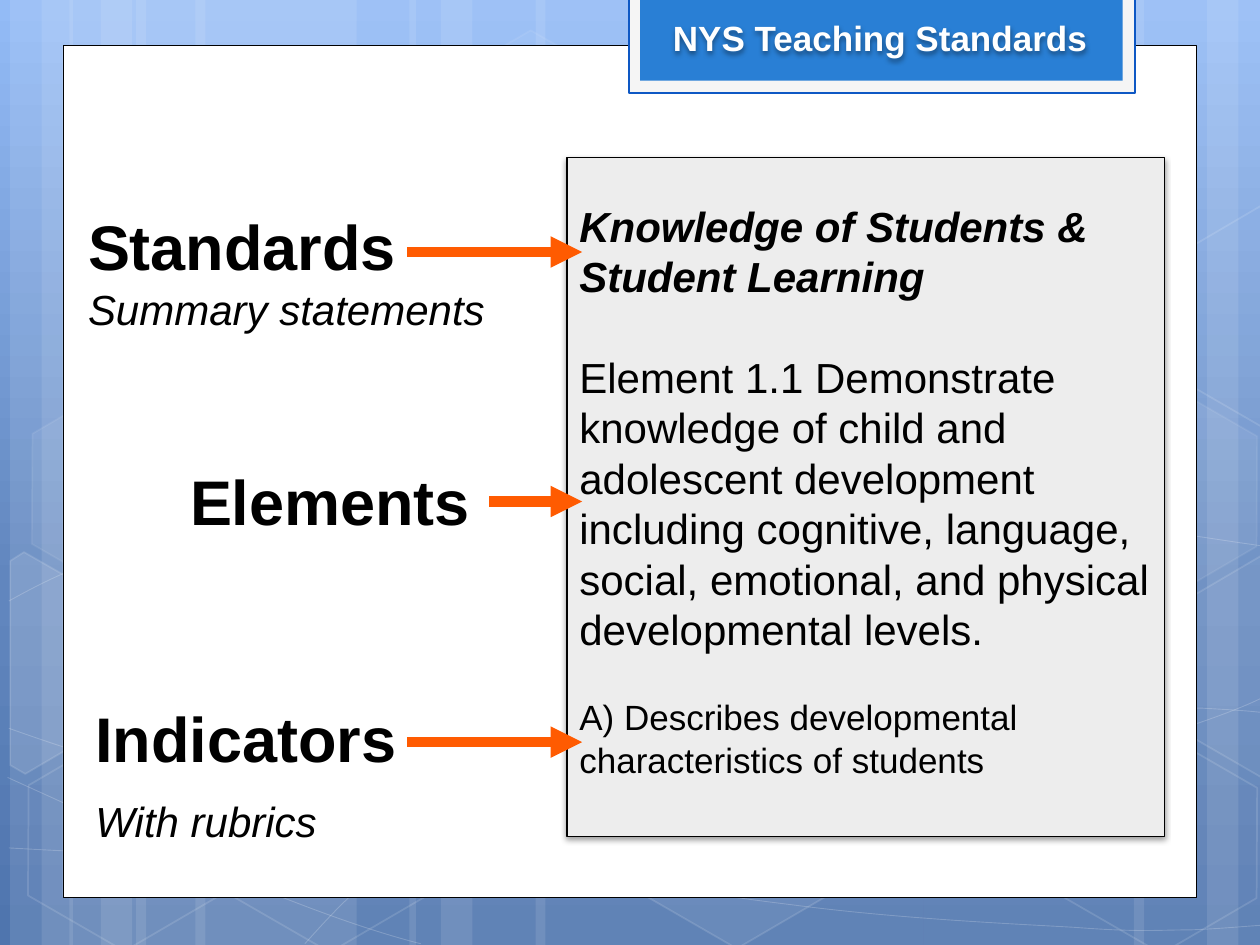
from copy import deepcopy
from dataclasses import dataclass
from math import cos, radians, sin
from typing import Optional

from lxml import etree
from pptx import Presentation
from pptx.dml.color import RGBColor
from pptx.enum.shapes import MSO_CONNECTOR, MSO_SHAPE
from pptx.enum.text import MSO_ANCHOR, MSO_AUTO_SIZE, PP_ALIGN
from pptx.oxml.ns import qn
from pptx.util import Emu, Inches, Pt

RECTANGLE, HEXAGON = MSO_SHAPE.RECTANGLE, MSO_SHAPE.HEXAGON
STRAIGHT = MSO_CONNECTOR.STRAIGHT
TOP = MSO_ANCHOR.TOP
NO_AUTOFIT = MSO_AUTO_SIZE.NONE
LEFT, CENTER = PP_ALIGN.LEFT, PP_ALIGN.CENTER
CELL = Inches(1)
COLUMNS, ROWS = 10, 7.5
FONT = "Arial"
WHITE, BLACK, ORANGE = "FFFFFF", "000000", "FF5B01"
TILT = 30


@dataclass
class Box:
    left: float
    top: float
    width: float
    height: float

    def emu(self) -> list[Emu]:
        return [grid(n) for n in (self.left, self.top, self.width, self.height)]


@dataclass
class Style:
    fill: Optional[str] = None
    fill_alpha: int = 100
    line: Optional[str] = None
    line_width: float = 1
    line_alpha: int = 100


@dataclass
class Hexagon:
    left: float
    top: float
    fill_alpha: int
    line_alpha: int


@dataclass
class CutHexagon:
    center: tuple[float, float]
    corners: list[tuple[float, float]]
    fill_alpha: int


@dataclass
class Label:
    box: Box
    heading: str
    note: str = ""
    note_gap: float = 0


@dataclass
class Arrow:
    start: float
    row: float


BARS = [(1.08, 1.75), (0.08, 0.5), (0.33, 0.83), (1.55, 1.75), (0.55, 0.5), (0.8, 0.83),
        (7.33, 1.75), (9.58, 0.5), (9, 0.83), (4.25, 3.08), (3.25, 0.5), (3.5, 0.83)]
CURVES = [
    [(0.07, 6.73), (0.61, 6.76), (1.15, 6.79), (1.9, 6.78), (2.65, 6.77), (3.58, 6.75),
     (4.58, 6.65), (5.58, 6.55), (7, 6.36), (7.92, 6.17), (8.83, 5.98), (9.77, 5.68), (10.07, 5.51)],
    [(0.07, 4.77), (0.36, 4.61), (0.65, 4.46), (1.21, 4.31), (1.78, 4.16), (2.59, 3.94),
     (3.47, 3.87), (4.36, 3.8), (5.44, 3.79), (6.54, 3.87), (7.64, 3.95), (9.47, 4.26), (10.07, 4.34)],
    [(0.06, 6.17), (1.27, 6.72), (2.47, 7.27), (3.34, 7.49)],
    [(0.07, 5.78), (0.38, 5.89), (0.7, 6), (1.28, 6.16), (1.86, 6.31), (2.73, 6.56), (3.57, 6.73),
     (4.4, 6.9), (5.45, 7.08), (6.28, 7.18), (7.11, 7.29), (8, 7.33), (8.53, 7.36),
     (9.05, 7.4), (9.19, 7.38), (9.45, 7.38), (9.71, 7.37), (9.89, 7.35), (10.07, 7.34)],
    [(2.42, 7.49), (2.6, 7.29), (2.78, 7.09), (3.02, 6.91), (3.26, 6.73), (3.6, 6.53), (3.88, 6.39),
     (4.16, 6.25), (4.33, 6.19), (4.7, 6.09), (5.06, 5.99), (5.73, 5.85), (6.08, 5.78),
     (6.44, 5.71), (6.49, 5.71), (6.8, 5.69), (7.11, 5.66), (7.6, 5.63), (7.94, 5.62),
     (8.29, 5.61), (8.86, 5.62), (8.86, 5.62), (8.86, 5.62), (9.53, 5.62), (9.53, 5.62),
     (9.71, 5.63), (9.88, 5.64), (9.97, 5.65), (10.06, 5.66), (10.03, 5.65), (10.06, 5.66)],
]
HEXAGONS = [Hexagon(3.34, 0.36, 4, 8), Hexagon(4.97, 5.89, 6, 12), Hexagon(0.11, 5.91, 0, 12),
            Hexagon(0.14, 3.12, 7, 8), Hexagon(1.74, 5.92, 0, 12), Hexagon(7.53, 4.53, 10, 12),
            Hexagon(8.34, 5.93, 0, 12), Hexagon(8.34, 3.14, 7, 8)]
CUT_HEXAGONS = [
    CutHexagon((0.36, 5.35), [(0.08, 4.45), (0.19, 4.38), (0.96, 4.82), (0.95, 5.7),
                              (0.2, 6.14), (0.08, 6.07)], 10),
    CutHexagon((9.85, 5.2), [(9.26, 4.85), (10.01, 4.41), (10.09, 4.46), (10.09, 6.13),
                             (10.02, 6.17), (9.26, 5.73)], 4),
    CutHexagon((9.85, 2.41), [(9.26, 2.07), (10.01, 1.63), (10.1, 1.68), (10.09, 3.35),
                              (10.02, 3.39), (9.26, 2.95)], 0),
]
LABELS = [Label(Box(0.66, 5.5, 3.2, 1.31), "Indicators", "With rubrics", 12),
          Label(Box(0.6, 1.6, 3.38, 1.11), "Standards", "Summary statements"),
          Label(Box(1.41, 3.62, 2.45, 0.71), "Elements")]
ARROWS = [Arrow(3.23, 2), Arrow(3.88, 3.98), Arrow(3.23, 5.89)]
ARROW_TIP = 4.62


def grid(cells: float) -> Emu:
    return Emu(round(cells * CELL))


def color(code: str) -> RGBColor:
    return RGBColor.from_string(code)


def set_alpha(solid_fill, percent: int) -> None:
    if percent < 100:
        etree.SubElement(solid_fill[0], qn("a:alpha"), val=str(percent * 1000))


def apply_style(shape, style: Style) -> None:
    shape.shadow.inherit = False
    properties = shape._element.spPr
    if style.fill and style.fill_alpha:
        shape.fill.solid()
        shape.fill.fore_color.rgb = color(style.fill)
        set_alpha(properties.find(qn("a:solidFill")), style.fill_alpha)
    else:
        shape.fill.background()
    if style.line:
        shape.line.color.rgb = color(style.line)
        shape.line.width = Pt(style.line_width)
        set_alpha(properties.find(qn("a:ln")).find(qn("a:solidFill")), style.line_alpha)
    else:
        shape.line.fill.background()


def add_shadow(shape) -> None:
    shape.shadow.inherit = False
    effects = shape._element.spPr.find(qn("a:effectLst"))
    shadow = etree.SubElement(effects, qn("a:outerShdw"), blurRad=str(Pt(3.1)), dist=str(Pt(1.6)),
                              dir="5400000", rotWithShape="0")
    set_alpha([etree.SubElement(shadow, qn("a:srgbClr"), val=BLACK)], 38)


def add_box(shapes, box: Box, style: Style, kind=RECTANGLE):
    shape = shapes.add_shape(kind, *box.emu())
    apply_style(shape, style)
    return shape


def add_outline(shapes, points, style: Style, close: bool):
    corners = [(grid(x), grid(y)) for x, y in points]
    builder = shapes.build_freeform(*corners[0])
    builder.add_line_segments(corners[1:], close=close)
    outline = builder.convert_to_shape()
    apply_style(outline, style)
    return outline


def add_curve(shapes, knots, style: Style) -> None:
    outline = add_outline(shapes, knots, style, False)
    segments = list(outline._element.iter(qn("a:lnTo")))
    for first in range(0, len(segments), 3):
        bezier = etree.Element(qn("a:cubicBezTo"))
        segments[first].addprevious(bezier)
        for segment in segments[first:first + 3]:
            bezier.append(segment[0])
            segment.getparent().remove(segment)


def turn_back(point, center) -> tuple[float, float]:
    angle = radians(-TILT)
    dx, dy = point[0] - center[0], point[1] - center[1]
    return (center[0] + dx * cos(angle) - dy * sin(angle),
            center[1] + dx * sin(angle) + dy * cos(angle))


def write(frame, text: str, *, size: float, ink: str = BLACK, bold: bool = False,
          italic: bool = False, align=LEFT, before: float = 0) -> None:
    paragraph = frame.paragraphs[0] if not frame.text else frame.add_paragraph()
    paragraph.alignment = align
    paragraph.space_before = Pt(before)
    paragraph.line_spacing = Pt(1.2 * size)
    run = paragraph.add_run()
    run.text = text
    font = run.font
    font.name, font.size, font.bold, font.italic = FONT, Pt(size), bold, italic
    font.color.rgb = color(ink)


def prepare_frame(shape, wrap: bool = True):
    frame = shape.text_frame
    frame.word_wrap = wrap
    frame.auto_size = NO_AUTOFIT
    frame.vertical_anchor = TOP
    return frame


def add_label(shapes, label: Label) -> None:
    frame = prepare_frame(shapes.add_textbox(*label.box.emu()), wrap=False)
    write(frame, label.heading, size=36, bold=True)
    if label.note:
        write(frame, label.note, size=24, italic=True, before=label.note_gap)


def add_arrow(shapes, arrow: Arrow) -> None:
    connector = shapes.add_connector(STRAIGHT, grid(ARROW_TIP), grid(arrow.row),
                                     grid(arrow.start), grid(arrow.row))
    connector.line.color.rgb = color(ORANGE)
    connector.line.width = Pt(6)
    properties = connector._element.spPr
    etree.SubElement(properties.find(qn("a:ln")), qn("a:headEnd"), type="triangle")
    etree.SubElement(properties, qn("a:effectLst"))


def add_backdrop(slide) -> None:
    fill = slide.background.fill
    fill.gradient()
    fill.gradient_angle = 270
    first = fill.gradient_stops[0]._gs
    first.addnext(deepcopy(first))
    for stop, (position, code) in zip(fill.gradient_stops, [(0, "93BBF6"), (0.62, "6186BE"), (1, "4F75AE")]):
        stop.position = position
        stop.color.rgb = color(code)
    shapes = slide.shapes.add_group_shape().shapes
    for left, width in BARS:
        add_box(shapes, Box(left, 0, width, ROWS), Style(WHITE, 10))
    for knots in CURVES:
        add_curve(shapes, knots, Style(line=WHITE, line_width=0.5, line_alpha=20))
    for cell in HEXAGONS:
        hexagon = add_box(shapes, Box(cell.left, cell.top, 1.75, 1.52),
                          Style(WHITE, cell.fill_alpha, WHITE, 1, cell.line_alpha), HEXAGON)
        hexagon.adjustments[0] = 0.285
        hexagon.rotation = TILT
    for cut in CUT_HEXAGONS:
        corners = [turn_back(corner, cut.center) for corner in cut.corners]
        add_outline(shapes, corners, Style(WHITE, cut.fill_alpha, WHITE, 1, 12), True).rotation = TILT


def add_panel(shapes) -> None:
    panel = add_box(shapes, Box(4.5, 1.25, 4.74, 5.39), Style("EDEDED", line=BLACK, line_width=0.75))
    add_shadow(panel)
    frame = prepare_frame(panel)
    frame.margin_top = grid(0.34)
    write(frame, "Knowledge of Students & Student Learning", size=24, bold=True, italic=True)
    write(frame, "Element 1.1 Demonstrate knowledge of child and adolescent development including "
          "cognitive, language, social, emotional, and physical developmental levels.", size=24, before=28.8)
    write(frame, "A) Describes developmental characteristics of students", size=20, before=24)


def add_title(slide) -> None:
    title = slide.shapes.title
    title.left, title.top, title.width, title.height = Box(5.18, 0.08, 3.61, 0.44).emu()
    write(prepare_frame(title), "NYS Teaching Standards", size=20, ink=WHITE, bold=True, align=CENTER)
    add_shadow(title)
    slide.shapes._spTree.append(title._element)


def main() -> None:
    deck = Presentation()
    deck.slide_width, deck.slide_height = grid(COLUMNS), grid(ROWS)
    slide = deck.slides.add_slide(deck.slide_layouts[5])
    shapes = slide.shapes
    add_backdrop(slide)
    add_box(shapes, Box(0.5, 0.36, 9, 6.76), Style(WHITE, line=BLACK, line_width=0.5))
    add_box(shapes, Box(4.99, -0.02, 4.02, 0.76), Style("F5F5F5", line="0E58C4", line_width=1.25))
    add_box(shapes, Box(5.08, -0.04, 3.83, 0.68), Style("297FD5"))
    add_panel(shapes)
    for label in LABELS:
        add_label(shapes, label)
    for arrow in ARROWS:
        add_arrow(shapes, arrow)
    add_title(slide)
    deck.save("out.pptx")


if __name__ == "__main__":
    main()
